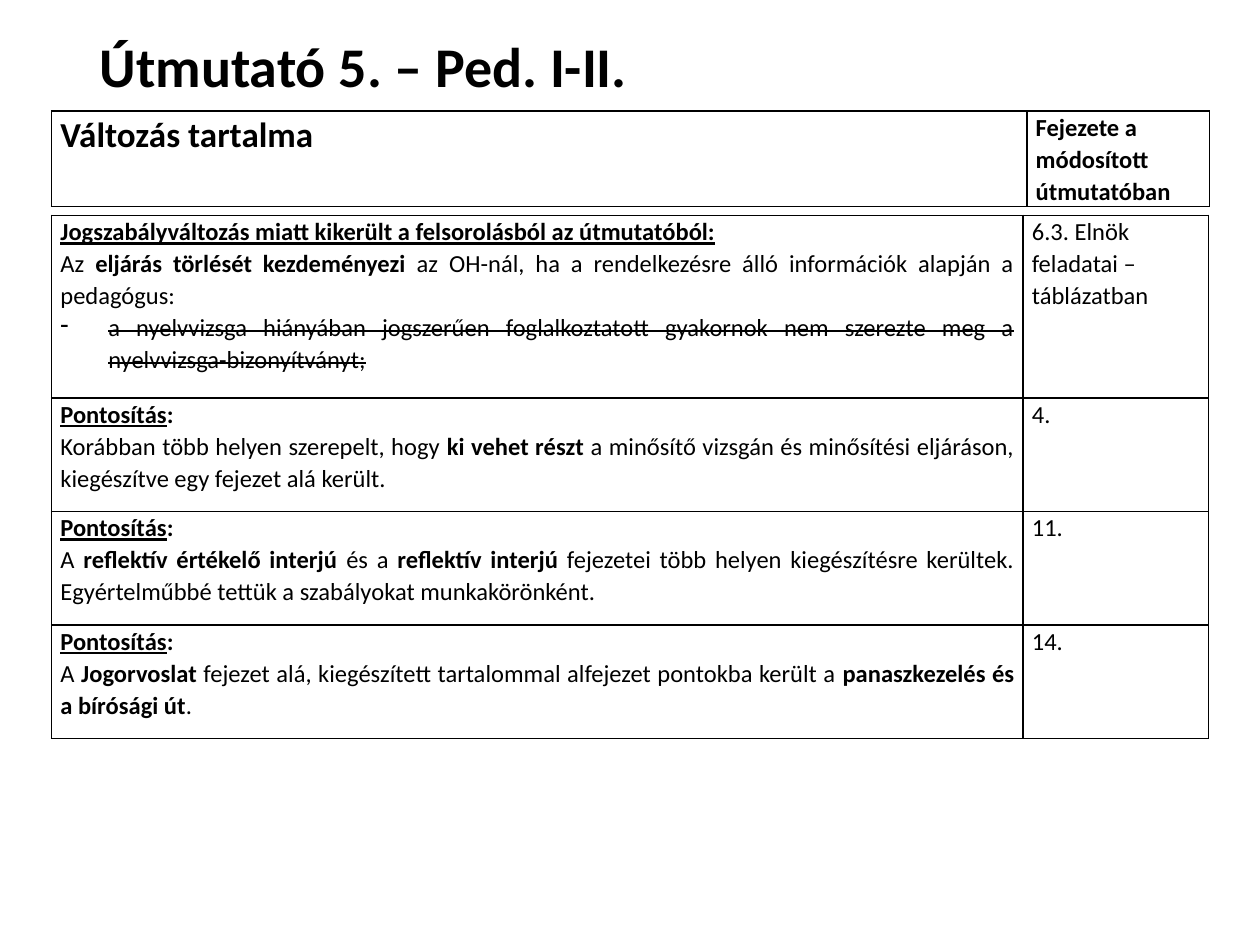
import pptx
import pptx.util
import pptx.dml.color
import pptx.enum.text
import pptx.oxml.ns
import lxml.etree

Inches, Pt = pptx.util.Inches, pptx.util.Pt
ALIGN = pptx.enum.text.PP_ALIGN
ANCHOR = pptx.enum.text.MSO_ANCHOR
COLORS = {"ink": "000000", "paper": "FFFFFF"}
FONT = "Calibri"

# Content: a cell is a list of paragraphs, a paragraph a list of (text, style);
# style letters: b bold, u underlined, s struck through
TITLE = [("Útmutató 5. – Ped. I-II.", "b")]
CLARIFICATION = [("Pontosítás", "bu"), (":", "b")]
HEADER = [([[("Változás tartalma", "b")]],
           [[("Fejezete a módosított útmutatóban", "b")]])]
CHANGES = [
    ([[("Jogszabályváltozás miatt kikerült a felsorolásból az útmutatóból:", "bu")],
      [("Az ", ""), ("eljárás törlését kezdeményezi ", "b"),
       ("az OH-nál, ha a rendelkezésre álló információk alapján a pedagógus:", "")],
      [("a nyelvvizsga hiányában jogszerűen foglalkoztatott gyakornok nem szerezte "
        "meg a nyelvvizsga-bizonyítványt;", "s")]],
     [[("6.3. Elnök feladatai – táblázatban", "")]]),
    ([CLARIFICATION,
      [("Korábban több helyen szerepelt, hogy ", ""), ("ki vehet részt ", "b"),
       ("a minősítő vizsgán és minősítési eljáráson, kiegészítve egy fejezet alá került.", "")]],
     [[("4.", "")]]),
    ([CLARIFICATION,
      [("A ", ""), ("reflektív értékelő interjú ", "b"), ("és a ", ""),
       ("reflektív interjú", "b"),
       (" fejezetei több helyen kiegészítésre kerültek. "
        "Egyértelműbbé tettük a szabályokat munkakörönként.", "")]],
     [[("11.", "")]]),
    ([CLARIFICATION,
      [("A ", ""), ("Jogorvoslat", "b"),
       (" fejezet alá, kiegészített tartalommal alfejezet pontokba került a ", ""),
       ("panaszkezelés és a bírósági út", "b"), (".", "")]],
     [[("14.", "")]]),
]


def add_child(parent, tag, **attributes):
    child = lxml.etree.SubElement(parent, pptx.oxml.ns.qn(tag))
    for name, value in attributes.items():
        child.set(name, str(value))
    return child


def write_text(frame, paragraphs, size=14, align=ALIGN.LEFT, spacing=1.07):
    for index, spans in enumerate(paragraphs):
        para = frame.paragraphs[0] if index == 0 else frame.add_paragraph()
        para.alignment = align
        para.line_spacing = spacing
        # A struck paragraph is a list item with a hanging dash
        if spans[0][1] == "s":
            properties = para._p.get_or_add_pPr()
            properties.set("marL", str(Inches(0.38)))
            properties.set("indent", str(-Inches(0.38)))
            add_child(properties, "a:buChar", char="-")
        for text, style in spans:
            span = para.add_run()
            span.text = text
            span.font.name = FONT
            span.font.size = Pt(size)
            span.font.bold = "b" in style
            span.font.underline = "u" in style
            span.font.color.rgb = pptx.dml.color.RGBColor.from_string(COLORS["ink"])
            if "s" in style:
                span._r.get_or_add_rPr().set("strike", "sngStrike")


def format_cell(cell):
    cell.margin_left = cell.margin_right = Inches(0.07)
    cell.margin_top = cell.margin_bottom = 0
    cell.vertical_anchor = ANCHOR.TOP
    properties = cell._tc.get_or_add_tcPr()
    for side in ("a:lnL", "a:lnR", "a:lnT", "a:lnB"):
        line = add_child(properties, side, w=Pt(1))
        add_child(add_child(line, "a:solidFill"), "a:srgbClr", val=COLORS["ink"])
    cell.fill.solid()
    cell.fill.fore_color.rgb = pptx.dml.color.RGBColor.from_string(COLORS["paper"])


def add_grid(page, rows, top, widths, heights, first_size=14, first_align=ALIGN.LEFT):
    table = page.shapes.add_table(
        len(rows), len(widths), Inches(0.41), Inches(top),
        Inches(sum(widths)), Inches(sum(heights))).table
    table.first_row = table.horz_banding = False
    for column, width in zip(table.columns, widths):
        column.width = Inches(width)
    formats = [{"size": first_size, "align": first_align}, {}]
    for row, height, contents in zip(table.rows, heights, rows):
        row.height = Inches(height)
        for cell, paragraphs, options in zip(row.cells, contents, formats):
            format_cell(cell)
            write_text(cell.text_frame, paragraphs, **options)


def main():
    deck = pptx.Presentation()
    deck.slide_width, deck.slide_height = Inches(10), Inches(7.5)
    page = deck.slides.add_slide(deck.slide_layouts[5])

    # Title
    title = page.shapes.title
    title.left, title.top = Inches(0.69), Inches(0.29)
    title.width, title.height = Inches(8.62), Inches(0.52)
    title.text_frame.vertical_anchor = ANCHOR.MIDDLE
    write_text(title.text_frame, [TITLE], size=32, spacing=0.9)

    # Column headings, then the list of changes
    add_grid(page, HEADER, 0.88, [7.74, 1.45], [0.76], first_size=20)
    add_grid(page, CHANGES, 1.71, [7.71, 1.47], [1.45] + [0.9] * 3,
             first_align=ALIGN.JUSTIFY)
    deck.save("out.pptx")


if __name__ == "__main__":
    main()
